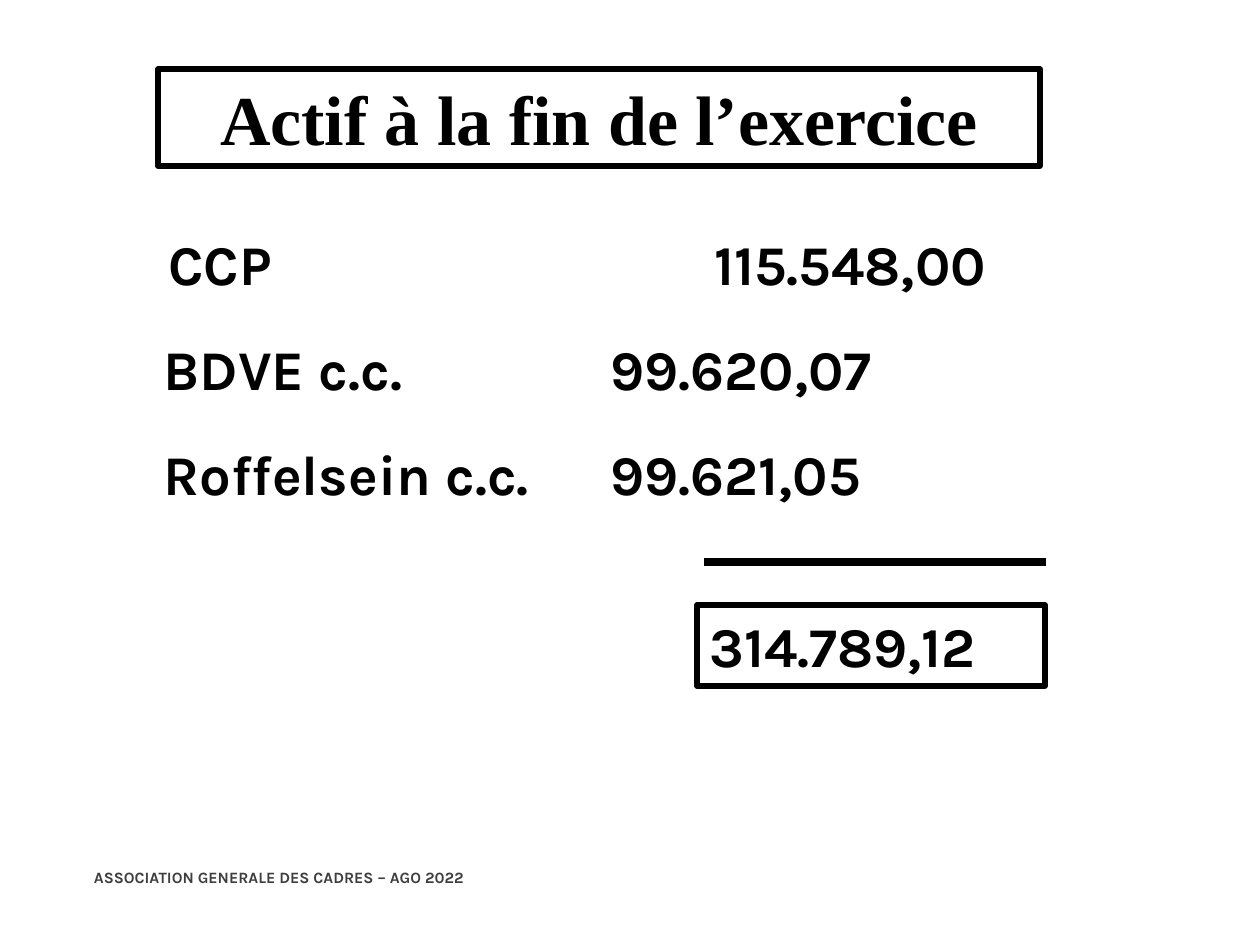
import dataclasses

import pptx
import pptx.dml.color
import pptx.enum.shapes
import pptx.enum.text
import pptx.oxml.ns
import pptx.util
from lxml import etree

SCALE = 914400 / 126


@dataclasses.dataclass(frozen=True)
class Theme:
    ink: str = "000000"
    grey: str = "3E3D40"
    serif: str = "Times New Roman"
    sans: str = "Karla"
    title: int = 40
    body: int = 32
    foot: int = 9
    frame: float = 3
    rule: float = 4.5


THEME = Theme()


def px(count):
    return pptx.util.Emu(round(count * SCALE))


def rgb(code):
    return pptx.dml.color.RGBColor.from_string(code)


def write(shape, text, size, font=THEME.sans, color=THEME.ink, grow=True):
    """Fill the shape with one bold paragraph and return that paragraph."""
    frame = shape.text_frame
    frame.text = text
    frame.word_wrap = True
    frame.vertical_anchor = pptx.enum.text.MSO_ANCHOR.TOP
    if grow:
        frame.auto_size = pptx.enum.text.MSO_AUTO_SIZE.SHAPE_TO_FIT_TEXT
    para = frame.paragraphs[0]
    para.alignment = pptx.enum.text.PP_ALIGN.LEFT
    for run in para.runs:
        run.font.name = font
        run.font.size = pptx.util.Pt(size)
        run.font.bold = True
        run.font.color.rgb = rgb(color)
    return para


def add_text(slide, box):
    return slide.shapes.add_textbox(*map(px, box))


def add_frame(slide, box):
    kind = pptx.enum.shapes.MSO_SHAPE.RECTANGLE
    shape = slide.shapes.add_shape(kind, *map(px, box))
    shape.shadow.inherit = False
    shape.fill.background()
    shape.line.color.rgb = rgb(THEME.ink)
    shape.line.width = pptx.util.Pt(THEME.frame)
    return shape


def add_title(slide, box, text):
    para = write(add_frame(slide, box), text, THEME.title, THEME.serif)
    para.alignment = pptx.enum.text.PP_ALIGN.CENTER


def add_row(slide, box, label, amount, stop):
    """Place a label and its amount, parted by a tab stop inside the box."""
    para = write(add_text(slide, box), f"{label}\t{amount}", THEME.body)
    qn = pptx.oxml.ns.qn
    tabs = etree.SubElement(para._p.get_or_add_pPr(), qn("a:tabLst"))
    etree.SubElement(tabs, qn("a:tab"), pos=str(px(stop)), algn="l")


def add_total(slide, box, amount):
    """Draw the sum line at the top of the box and the framed total below."""
    left, top, width, height = box
    kind = pptx.enum.shapes.MSO_CONNECTOR.STRAIGHT
    ends = (left + 7, top, left + width + 1, top)
    line = slide.shapes.add_connector(kind, *map(px, ends))
    line.line.color.rgb = rgb(THEME.ink)
    line.line.width = pptx.util.Pt(THEME.rule)
    etree.SubElement(line._element.spPr, pptx.oxml.ns.qn("a:effectLst"))
    frame = add_frame(slide, (left, top + 43, width, height - 43))
    write(frame, amount, THEME.body)


def add_footer(slide, box, text):
    shape = add_text(slide, box)
    write(shape, text, THEME.foot, color=THEME.grey, grow=False)
    frame = shape.text_frame
    frame.margin_left = frame.margin_right = 0
    frame.margin_top = frame.margin_bottom = 0


def main():
    deck = pptx.Presentation()
    deck.slide_width, deck.slide_height = px(1260), px(945)
    slide = deck.slides.add_slide(deck.slide_layouts[6])

    add_footer(slide, (94, 868, 745, 49),
               "ASSOCIATION GENERALE DES CADRES – AGO 2022")
    add_title(slide, (158, 69, 882, 97), "Actif à la fin de l’exercice")
    rows = [
        ("CCP", "115.548,00", 156, 546),
        ("BDVE c.c.", "99.620,07", 151, 447),
        ("Roffelsein c.c.", "99.621,05", 151, 447),
    ]
    for index, (label, amount, left, stop) in enumerate(rows):
        box = (left, 223 + 105 * index, 906, 81)
        add_row(slide, box, label, amount, stop)
    add_total(slide, (697, 562, 348, 124), "314.789,12")

    deck.save("out.pptx")


if __name__ == "__main__":
    main()
